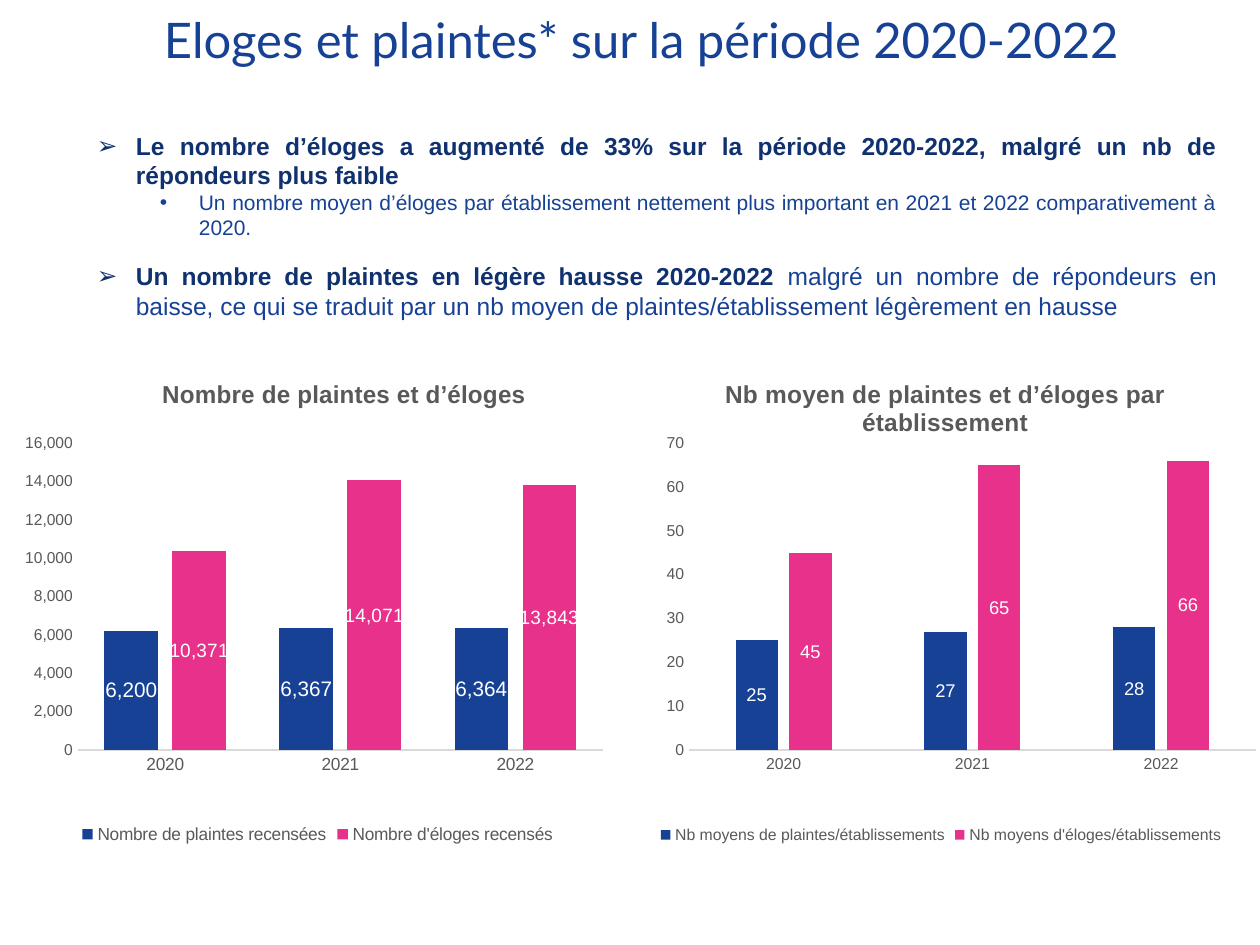
from dataclasses import dataclass
from typing import Any, Optional

import pptx
import pptx.chart.data
import pptx.dml.color
import pptx.enum.chart
import pptx.enum.text
import pptx.oxml
import pptx.oxml.ns
import pptx.util
from pptx.util import Inches, Pt

BLUE = pptx.dml.color.RGBColor(0x16, 0x41, 0x94)
NAVY = pptx.dml.color.RGBColor(0x10, 0x31, 0x6F)
PINK = pptx.dml.color.RGBColor(0xE8, 0x31, 0x8A)
GREY = pptx.dml.color.RGBColor(0x59, 0x59, 0x59)
PALE_GREY = pptx.dml.color.RGBColor(0xD9, 0xD9, 0xD9)
WHITE = pptx.dml.color.RGBColor(0xFF, 0xFF, 0xFF)
YEARS = ("2020", "2021", "2022")


@dataclass(frozen=True)
class Run:
    text: str
    size: float
    color: pptx.dml.color.RGBColor
    bold: bool = False


@dataclass(frozen=True)
class Bullet:
    symbol: str
    runs: tuple[Run, ...]
    level: int = 0
    margin: float = 0.31
    space_before: float = 0


@dataclass(frozen=True)
class Series:
    name: str
    values: tuple[int, ...]
    color: pptx.dml.color.RGBColor
    label_size: float


@dataclass(frozen=True)
class ColumnChart:
    title: str
    title_place: tuple[float, float]
    left: float
    width: float
    plot: tuple[float, float, float, float]
    series: tuple[Series, ...]
    maximum: int
    unit: int
    number_format: str
    gap: int
    category_size: float
    legend_size: float


BULLETS = (
    Bullet("➢", (Run("Le nombre d’éloges a augmenté de 33% sur la période 2020-2022, "
                     "malgré un nb de répondeurs plus faible", 14, NAVY, True),)),
    Bullet("•", (Run("Un nombre moyen d’éloges par établissement nettement plus important "
                     "en 2021 et 2022 comparativement à 2020.", 12, BLUE),),
           level=1, margin=0.81),
    Bullet("➢", (Run("Un nombre de plaintes en légère hausse 2020-2022 ", 14, NAVY, True),
                 Run("malgré un nombre de répondeurs en baisse, ce qui se traduit par un nb "
                     "moyen de plaintes/établissement légèrement en hausse", 14, BLUE)),
           space_before=12),
)

CHARTS = (
    ColumnChart(
        "Nombre de plaintes et d’éloges", (0.22, 0.04), 0.2, 4.59, (0.08, 0.18, 0.92, 0.62),
        (Series("Nombre de plaintes recensées", (6200, 6367, 6364), BLUE, 12),
         Series("Nombre d'éloges recensés", (10371, 14071, 13843), PINK, 11)),
        16000, 2000, "#,##0", 100, 10, 10),
    ColumnChart(
        "Nb moyen de plaintes et d’éloges par établissement", (0.15, 0.04), 4.97, 5,
        (0.1, 0.18, 0.9, 0.62),
        (Series("Nb moyens de plaintes/établissements", (25, 27, 28), BLUE, 10.5),
         Series("Nb moyens d'éloges/établissements", (45, 65, 66), PINK, 10.5)),
        70, 10, "0", 219, 9, 9),
)


def set_attributes(target: Any, values: dict[str, Any]) -> None:
    for name, value in values.items():
        setattr(target, name, value)


def format_font(font: Any, size: float, color: pptx.dml.color.RGBColor,
                bold: bool = False, name: str = "Arial") -> None:
    set_attributes(font, {"name": name, "size": Pt(size), "bold": bold})
    font.color.rgb = color


def add_run(paragraph: Any, run: Run, font_name: str = "Arial") -> None:
    text_run = paragraph.add_run()
    text_run.text = run.text
    format_font(text_run.font, run.size, run.color, run.bold, font_name)


def add_title(slide: Any, run: Run) -> None:
    shape = slide.shapes.add_textbox(Inches(0.59), Inches(0), Inches(9), Inches(0.61))
    set_attributes(shape.text_frame, {
        "word_wrap": True, "vertical_anchor": pptx.enum.text.MSO_ANCHOR.MIDDLE})
    paragraph = shape.text_frame.paragraphs[0]
    paragraph.alignment = pptx.enum.text.PP_ALIGN.CENTER
    add_run(paragraph, run, "Lato")


def add_bullets(slide: Any, bullets: tuple[Bullet, ...]) -> None:
    shape = slide.shapes.add_textbox(Inches(0.67), Inches(0.99), Inches(9.09), Inches(1.62))
    frame = shape.text_frame
    frame.word_wrap = True
    for index, bullet in enumerate(bullets):
        paragraph = frame.add_paragraph() if index else frame.paragraphs[0]
        properties = paragraph._p.get_or_add_pPr()
        properties.set("marL", str(Inches(bullet.margin)))
        properties.set("indent", str(Inches(-0.31)))
        set_attributes(paragraph, {
            "alignment": pptx.enum.text.PP_ALIGN.JUSTIFY,
            "level": bullet.level,
            "space_before": Pt(bullet.space_before)})
        for tag, attribute, value in (("a:buFont", "typeface", "Arial"),
                                      ("a:buChar", "char", bullet.symbol)):
            element = pptx.oxml.xmlchemy.OxmlElement(tag)
            element.set(attribute, value)
            properties.append(element)
        for run in bullet.runs:
            add_run(paragraph, run)


def layout_xml(values: dict[str, Any]) -> Any:
    children = "".join(f'<c:{name} val="{value}"/>' for name, value in values.items())
    return pptx.oxml.parse_xml(
        f'<c:layout {pptx.oxml.ns.nsdecls("c")}>'
        f"<c:manualLayout>{children}</c:manualLayout></c:layout>")


def place_plot(chart: Any, plot: tuple[float, float, float, float]) -> None:
    area = chart._chartSpace.chart.plotArea
    for layout in area.findall(pptx.oxml.ns.qn("c:layout")):
        area.remove(layout)
    modes = {"layoutTarget": "inner", "xMode": "edge", "yMode": "edge"}
    area.insert(0, layout_xml(modes | dict(zip("xywh", plot))))


def add_chart_title(chart: Any, text: str, place: tuple[float, float]) -> None:
    title = chart.chart_title
    add_run(title.text_frame.paragraphs[0], Run(text, 14, GREY, True))
    element = title._element
    for layout in element.findall(pptx.oxml.ns.qn("c:layout")):
        element.remove(layout)
    modes = {"xMode": "edge", "yMode": "edge"}
    element.find(pptx.oxml.ns.qn("c:tx")).addnext(layout_xml(modes | dict(zip("xy", place))))
    title.include_in_layout = False


def add_column_chart(slide: Any, content: ColumnChart) -> None:
    data = pptx.chart.data.CategoryChartData(number_format=content.number_format)
    data.categories = YEARS
    for series in content.series:
        data.add_series(series.name, series.values)
    chart = slide.shapes.add_chart(
        pptx.enum.chart.XL_CHART_TYPE.COLUMN_CLUSTERED, Inches(content.left), Inches(2.81),
        Inches(content.width), Inches(3.93), data).chart
    format_font(chart.font, 10, GREY)
    add_chart_title(chart, content.title, content.title_place)
    chart.has_legend = True
    set_attributes(chart.legend, {
        "position": pptx.enum.chart.XL_LEGEND_POSITION.BOTTOM, "include_in_layout": False})
    format_font(chart.legend.font, content.legend_size, GREY)

    for axis, size in ((chart.category_axis, content.category_size), (chart.value_axis, 9)):
        set_attributes(axis, {
            "has_major_gridlines": False,
            "major_tick_mark": pptx.enum.chart.XL_TICK_MARK.NONE})
        format_font(axis.tick_labels.font, size, GREY)
    axis_line: Optional[Any] = chart.category_axis.format.line
    axis_line.color.rgb = PALE_GREY
    axis_line.width = Pt(0.75)
    chart.value_axis.format.line.fill.background()
    set_attributes(chart.value_axis, {
        "minimum_scale": 0, "maximum_scale": content.maximum, "major_unit": content.unit})
    set_attributes(chart.value_axis.tick_labels, {
        "number_format": content.number_format, "number_format_is_linked": False})

    plot = chart.plots[0]
    set_attributes(plot, {
        "gap_width": content.gap, "overlap": -27, "vary_by_categories": False})
    for column, series in zip(plot.series, content.series):
        column.format.fill.solid()
        column.format.fill.fore_color.rgb = series.color
        set_attributes(column.data_labels, {
            "show_value": True, "position": pptx.enum.chart.XL_LABEL_POSITION.CENTER})
        format_font(column.data_labels.font, series.label_size, WHITE)
    place_plot(chart, content.plot)


def main() -> None:
    presentation = pptx.Presentation()
    set_attributes(presentation, {"slide_width": Inches(10), "slide_height": Inches(7.5)})
    slide = presentation.slides.add_slide(presentation.slide_layouts[6])
    add_title(slide, Run("Eloges et plaintes* sur la période 2020-2022", 28, BLUE))
    add_bullets(slide, BULLETS)
    for content in CHARTS:
        add_column_chart(slide, content)
    presentation.save("out.pptx")


if __name__ == "__main__":
    main()
